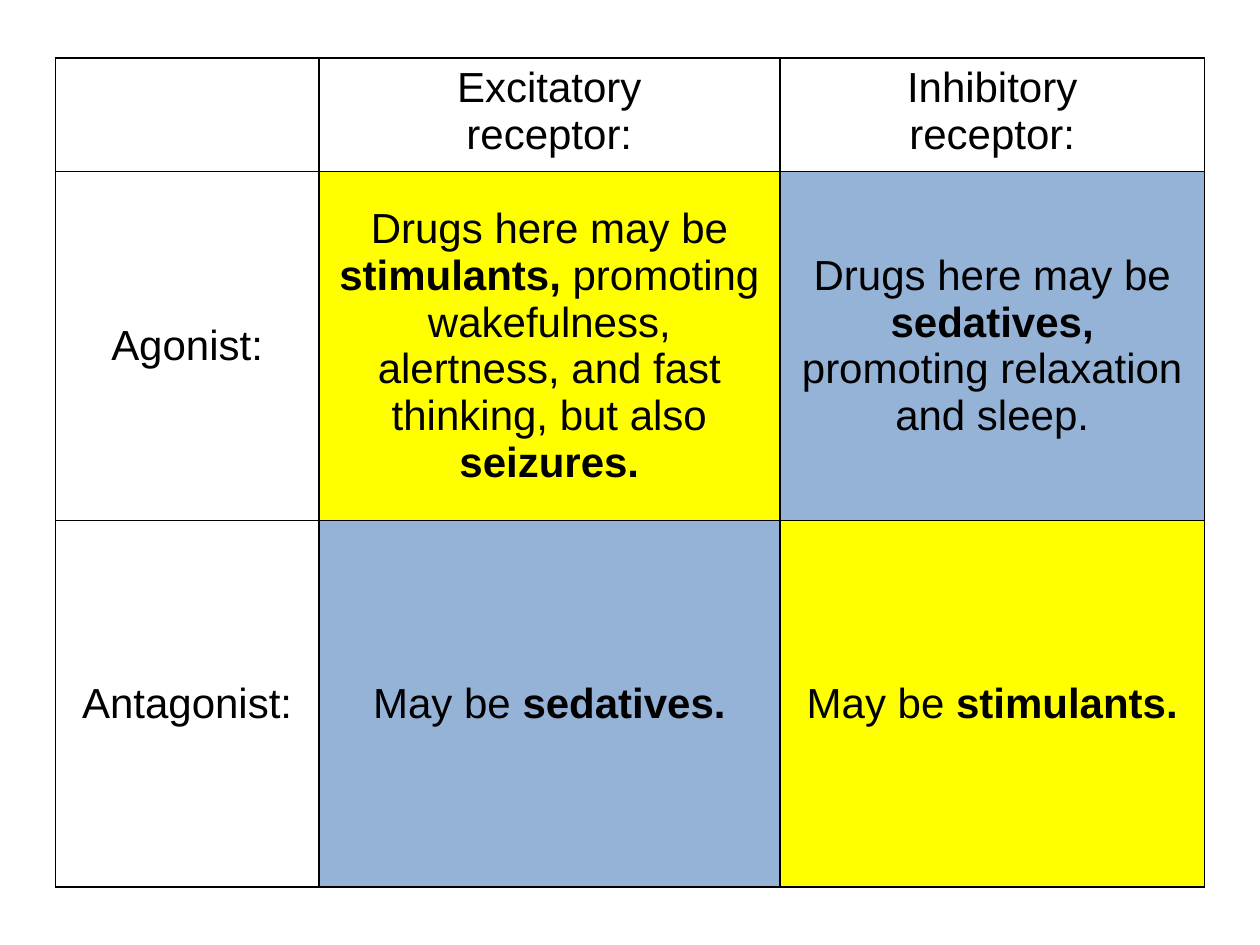
from lxml import etree
from pptx import Presentation
from pptx.dml.color import RGBColor
from pptx.enum.text import MSO_ANCHOR, PP_ALIGN
from pptx.oxml.ns import qn
from pptx.util import Inches, Pt

CENTER = PP_ALIGN.CENTER
TOP, MIDDLE = MSO_ANCHOR.TOP, MSO_ANCHOR.MIDDLE
BLACK, YELLOW, BLUE = "000000", "FFFF00", "95B3D7"
BLANK_LAYOUT = 6
BOLD_MARK = "*"

COLUMN_WIDTHS = [2.09, 3.66, 3.37]
ROW_HEIGHTS = [0.9, 2.77, 2.91]
CELLS = [
    [("", None), ("Excitatory\nreceptor:", None), ("Inhibitory\nreceptor:", None)],
    [
        ("Agonist:", None),
        ("Drugs here may be *stimulants,* promoting wakefulness, alertness, "
         "and fast thinking, but also *seizures.*", YELLOW),
        ("Drugs here may be *sedatives,* promoting relaxation and sleep.", BLUE),
    ],
    [
        ("Antagonist:", None),
        ("May be *sedatives.*", BLUE),
        ("May be *stimulants.*", YELLOW),
    ],
]


def color(value):
    return RGBColor.from_string(value)


def add_borders(cell):
    properties = cell._tc.get_or_add_tcPr()
    for index, side in enumerate(("a:lnL", "a:lnR", "a:lnT", "a:lnB")):
        line = etree.Element(qn(side), w=str(Pt(1)))
        fill = etree.SubElement(line, qn("a:solidFill"))
        etree.SubElement(fill, qn("a:srgbClr"), val=BLACK)
        properties.insert(index, line)


def write_text(cell, text):
    cell.text_frame.text = text.replace(BOLD_MARK, "")
    for paragraph, line in zip(cell.text_frame.paragraphs, text.split("\n")):
        paragraph.text = ""
        paragraph.alignment = CENTER
        for index, part in enumerate(line.split(BOLD_MARK)):
            if not part:
                continue
            run = paragraph.add_run()
            run.text = part
            run.font.name = "Arial"
            run.font.size = Pt(24)
            run.font.bold = index % 2 == 1
            run.font.color.rgb = color(BLACK)


def fill_cell(cell, text, fill, anchor):
    write_text(cell, text)
    cell.vertical_anchor = anchor
    if fill:
        cell.fill.solid()
        cell.fill.fore_color.rgb = color(fill)
    else:
        cell.fill.background()
    add_borders(cell)


def main():
    presentation = Presentation()
    presentation.slide_width = Inches(10)
    presentation.slide_height = Inches(7.5)
    slide = presentation.slides.add_slide(presentation.slide_layouts[BLANK_LAYOUT])
    table = slide.shapes.add_table(
        len(ROW_HEIGHTS), len(COLUMN_WIDTHS), Inches(0.44), Inches(0.46),
        Inches(sum(COLUMN_WIDTHS)), Inches(sum(ROW_HEIGHTS))).table
    table.first_row = False
    table.horz_banding = False
    for column, width in zip(table.columns, COLUMN_WIDTHS):
        column.width = Inches(width)
    for row_index, (row, height) in enumerate(zip(table.rows, ROW_HEIGHTS)):
        row.height = Inches(height)
        anchor = MIDDLE if row_index else TOP
        for cell, (text, fill) in zip(row.cells, CELLS[row_index]):
            fill_cell(cell, text, fill, anchor)
    presentation.save("out.pptx")


if __name__ == "__main__":
    main()
